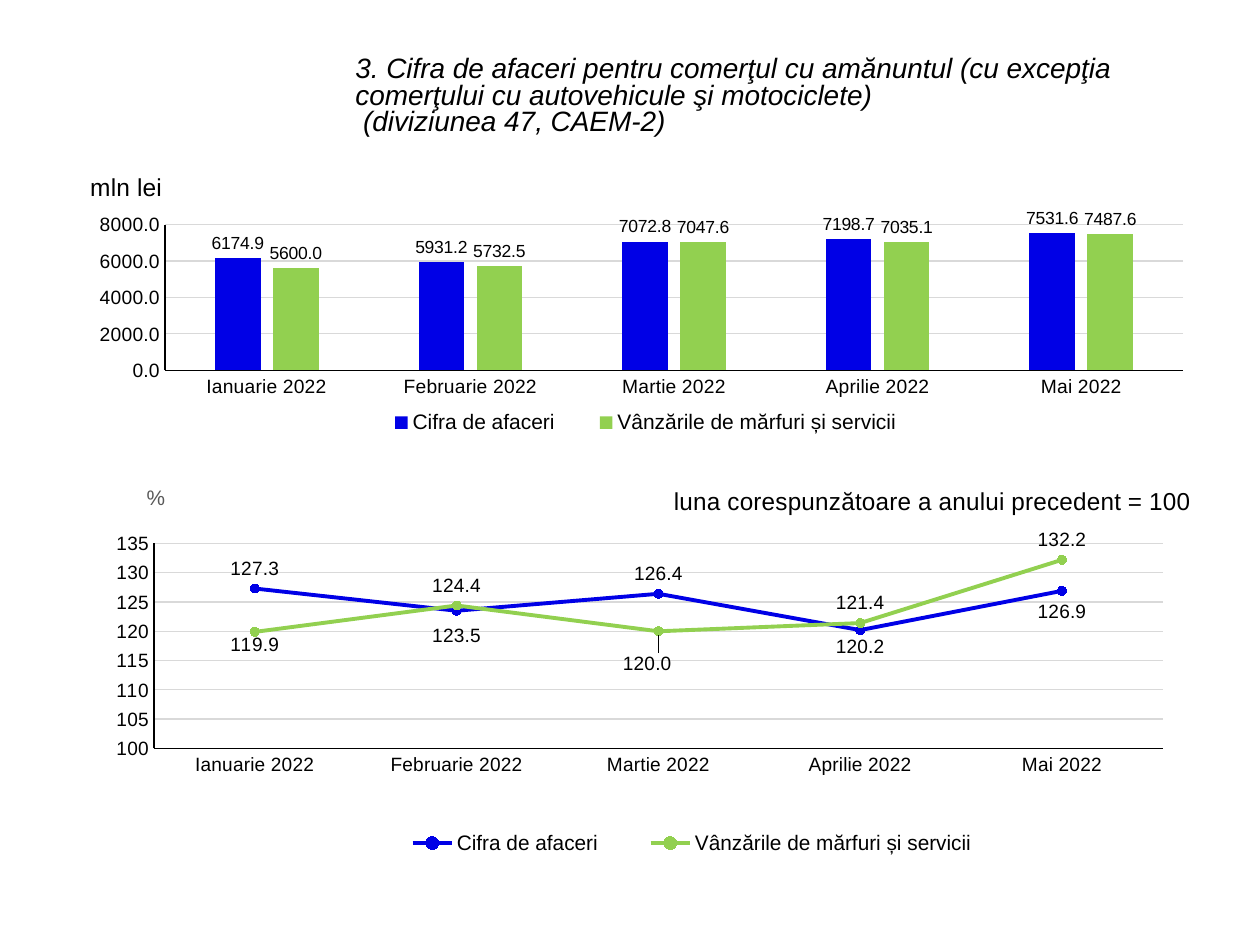
from dataclasses import dataclass, field

from lxml import etree
from pptx import Presentation
from pptx.chart.data import CategoryChartData
from pptx.dml.color import RGBColor
from pptx.enum import chart as charts, text
from pptx.oxml.ns import qn
from pptx.util import Inches, Pt

BLACK = RGBColor(0x00, 0x00, 0x00)
GRAY = RGBColor(0x59, 0x59, 0x59)
GRID = RGBColor(0xD9, 0xD9, 0xD9)
BLUE = RGBColor(0x00, 0x00, 0xE6)
GREEN = RGBColor(0x92, 0xD0, 0x50)
SERIES_COLORS = (BLUE, GREEN)
SERIES_NAMES = ("Cifra de afaceri", "Vânzările de mărfuri și servicii")
MONTHS = [f"{month} 2022" for month in ("Ianuarie", "Februarie", "Martie", "Aprilie", "Mai")]
FONT = "Arial"
BELOW = charts.XL_LABEL_POSITION.BELOW


@dataclass
class LabelShift:
    series: int
    point: int
    x: float
    y: float


@dataclass
class ChartSpec:
    kind: charts.XL_CHART_TYPE
    box: tuple[float, float, float, float]
    title: str
    title_at: tuple[float, float]
    plot: tuple[float, float, float, float]
    legend: tuple[float, float, float, float]
    values: tuple[tuple[float, ...], ...]
    axis_format: str
    axis_range: tuple[float, float, float]
    label_size: int
    label_position: charts.XL_LABEL_POSITION
    shifts: list[LabelShift] = field(default_factory=list)


TURNOVER = ChartSpec(
    kind=charts.XL_CHART_TYPE.COLUMN_CLUSTERED,
    box=(0.59, 1.23, 8.98, 2.31),
    title="mln lei",
    title_at=(0.01, 0.04),
    plot=(0.08, 0.24, 0.9, 0.5),
    legend=(0.25, 0.87, 0.51, 0.1),
    values=((6174.9, 5931.2, 7072.8, 7198.7, 7531.6), (5600.0, 5732.5, 7047.6, 7035.1, 7487.6)),
    axis_format="0.0",
    axis_range=(0, 8000, 2000),
    label_size=10,
    label_position=charts.XL_LABEL_POSITION.OUTSIDE_END,
)
INDICES = ChartSpec(
    kind=charts.XL_CHART_TYPE.LINE_MARKERS,
    box=(0.51, 3.75, 8.98, 3.13),
    title="luna corespunzătoare a anului precedent = 100",
    title_at=(0.54, 0.02),
    plot=(0.08, 0.18, 0.9, 0.52),
    legend=(0.27, 0.9, 0.58, 0.08),
    values=((127.3, 123.5, 126.4, 120.2, 126.9), (119.9, 124.4, 120.0, 121.4, 132.2)),
    axis_format="0",
    axis_range=(100, 135, 5),
    label_size=11,
    label_position=charts.XL_LABEL_POSITION.ABOVE,
    shifts=[
        LabelShift(0, 1, 0, 0.01),
        LabelShift(0, 3, 0, -0.01),
        LabelShift(0, 4, 0, 0),
        LabelShift(1, 0, 0, -0.02),
        LabelShift(1, 2, -0.01, 0.03),
    ],
)


def set_font(font, size: int, color: RGBColor = BLACK) -> None:
    font.name = FONT
    font.size = Pt(size)
    font.bold = False
    font.color.rgb = color


def set_layout(parent, index: int, numbers: tuple[float, ...], inner: bool = False, edge: bool = True) -> None:
    for old in parent.findall(qn("c:layout")):
        parent.remove(old)
    layout = etree.Element(qn("c:layout"))
    manual = etree.SubElement(layout, qn("c:manualLayout"))
    settings = [("layoutTarget", "inner")] if inner else []
    if edge:
        settings += [("xMode", "edge"), ("yMode", "edge")]
    settings += [(name, str(number)) for name, number in zip("xywh", numbers)]
    for name, setting in settings:
        etree.SubElement(manual, qn(f"c:{name}")).set("val", setting)
    parent.insert(index, layout)


def set_title(title, wording: str, position: tuple[float, float], size: int, color: RGBColor) -> None:
    title.text_frame.text = wording
    set_font(title.text_frame.paragraphs[0].font, size, color)
    set_layout(title._element, 1, position)


def format_axis(axis) -> None:
    set_font(axis.tick_labels.font, 11)
    axis.major_tick_mark = axis.minor_tick_mark = charts.XL_TICK_MARK.NONE
    axis.format.line.color.rgb = BLACK
    axis.format.line.width = Pt(0.75)


def format_series(series, color: RGBColor, spec: ChartSpec) -> None:
    if spec.kind == charts.XL_CHART_TYPE.LINE_MARKERS:
        series.smooth = False
        series.format.line.color.rgb = color
        series.format.line.width = Pt(2.25)
        series.marker.style = charts.XL_MARKER_STYLE.CIRCLE
        series.marker.size = 5
        series.marker.format.fill.solid()
        series.marker.format.fill.fore_color.rgb = color
        series.marker.format.line.color.rgb = color
    else:
        series.format.fill.solid()
        series.format.fill.fore_color.rgb = color
    labels = series.data_labels
    labels.show_value = True
    labels.position = spec.label_position
    labels.number_format = "0.0"
    labels.number_format_is_linked = False
    set_font(labels.font, spec.label_size)


def shift_label(plot, shift: LabelShift, size: int) -> None:
    label = plot.series[shift.series].points[shift.point].data_label
    set_font(label.font, size)
    label.position = BELOW
    label_element = plot.series[shift.series].data_labels._element.findall(qn("c:dLbl"))
    for element in label_element:
        if element.find(qn("c:idx")).get("val") == str(shift.point):
            set_layout(element, 1, (shift.x, shift.y), edge=False)


def add_chart(slide, spec: ChartSpec):
    data = CategoryChartData(number_format="0.0")
    data.categories = MONTHS
    for name, values in zip(SERIES_NAMES, spec.values):
        data.add_series(name, values)
    chart = slide.shapes.add_chart(spec.kind, *map(Inches, spec.box), data).chart
    set_font(chart.font, 10)
    chart.has_title = True
    set_title(chart.chart_title, spec.title, spec.title_at, 14, BLACK)
    chart.has_legend = True
    chart.legend.position = charts.XL_LEGEND_POSITION.BOTTOM
    chart.legend.include_in_layout = False
    set_font(chart.legend.font, 12)
    set_layout(chart.legend._element, 1, spec.legend)
    set_layout(chart._chartSpace.chart.plotArea, 0, spec.plot, inner=True)

    format_axis(chart.category_axis)
    axis = chart.value_axis
    format_axis(axis)
    axis.minimum_scale, axis.maximum_scale, axis.major_unit = spec.axis_range
    axis.tick_labels.number_format = spec.axis_format
    axis.tick_labels.number_format_is_linked = False
    axis.major_gridlines.format.line.color.rgb = GRID
    axis.major_gridlines.format.line.width = Pt(0.75)

    plot = chart.plots[0]
    plot.vary_by_categories = False
    for series, color in zip(plot.series, SERIES_COLORS):
        format_series(series, color, spec)
    for shift in spec.shifts:
        shift_label(plot, shift, spec.label_size)
    return chart


def add_title(slide) -> None:
    title = slide.shapes.title
    title.left, title.top, title.width, title.height = map(Inches, (2.72, 0.4, 6.77, 0.99))
    frame = title.text_frame
    frame.text = (
        "3. Cifra de afaceri pentru comerţul cu amănuntul (cu excepţia comerţului "
        "cu autovehicule şi motociclete)\v (diviziunea 47, CAEM-2)"
    )
    frame.auto_size = text.MSO_AUTO_SIZE.NONE
    frame.vertical_anchor = text.MSO_ANCHOR.TOP
    paragraph = frame.paragraphs[0]
    paragraph.alignment = text.PP_ALIGN.LEFT
    paragraph.line_spacing = 0.8
    set_font(paragraph.font, 16)
    paragraph.font.italic = True


def main() -> None:
    presentation = Presentation()
    presentation.slide_width, presentation.slide_height = Inches(10), Inches(7.5)
    slide = presentation.slides.add_slide(presentation.slide_layouts[5])
    add_title(slide)
    columns = add_chart(slide, TURNOVER)
    columns.plots[0].gap_width = 219
    columns.plots[0].overlap = -27
    percent = add_chart(slide, INDICES).value_axis.axis_title
    set_title(percent, "%", (0.07, 0.02), 12, GRAY)
    body = percent._element.find(f".//{qn('a:bodyPr')}")
    body.set("rot", "0")
    body.set("vert", "horz")
    presentation.save("out.pptx")


if __name__ == "__main__":
    main()
